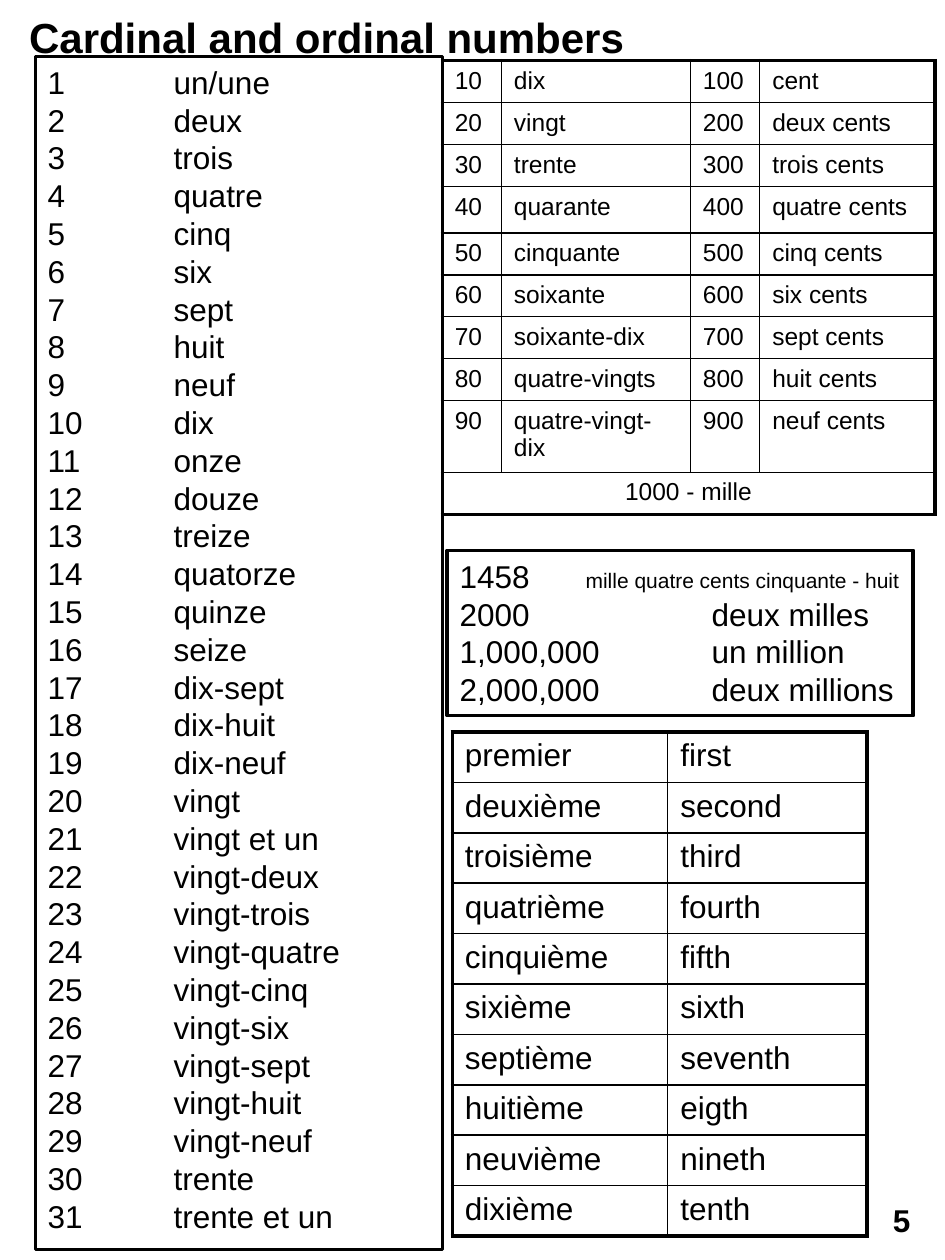
"""Build a one-page reference sheet of French cardinal and ordinal numbers."""
from lxml import etree
from pptx import Presentation
from pptx.dml.color import RGBColor
from pptx.enum.shapes import MSO_SHAPE
from pptx.enum.text import MSO_ANCHOR, MSO_AUTO_SIZE, PP_ALIGN
from pptx.oxml.ns import qn
from pptx.util import Pt

RECTANGLE = MSO_SHAPE.RECTANGLE
ROUNDED = MSO_SHAPE.ROUNDED_RECTANGLE
TOP, MIDDLE = MSO_ANCHOR.TOP, MSO_ANCHOR.MIDDLE
LEFT, CENTER = PP_ALIGN.LEFT, PP_ALIGN.CENTER
NO_AUTOFIT = MSO_AUTO_SIZE.NONE

TITLE_ONLY = 5
BLACK = "000000"
THIN, THICK = 1, 2.25
TAB = 72
LINE_HEIGHT = 21.6

CARDINALS = [
    "un/une", "deux", "trois", "quatre", "cinq", "six", "sept", "huit", "neuf", "dix",
    "onze", "douze", "treize", "quatorze", "quinze", "seize", "dix-sept", "dix-huit",
    "dix-neuf", "vingt", "vingt et un", "vingt-deux", "vingt-trois", "vingt-quatre",
    "vingt-cinq", "vingt-six", "vingt-sept", "vingt-huit", "vingt-neuf", "trente",
    "trente et un",
]
TENS = ["dix", "vingt", "trente", "quarante", "cinquante", "soixante", "soixante-dix",
        "quatre-vingts", "quatre-vingt-dix"]
HUNDREDS = ["cent", "deux cents", "trois cents", "quatre cents", "cinq cents",
            "six cents", "sept cents", "huit cents", "neuf cents"]
ORDINALS = [
    ("premier", "first"), ("deuxième", "second"), ("troisième", "third"),
    ("quatrième", "fourth"), ("cinquième", "fifth"), ("sixième", "sixth"),
    ("septième", "seventh"), ("huitième", "eigth"), ("neuvième", "nineth"),
    ("dixième", "tenth"),
]
LARGE_NUMBERS = [
    [("1458\t", 18), ("mille quatre cents cinquante - huit", 12)],
    [("2000\t\tdeux milles", 18)],
    [("1,000,000 \tun million", 18)],
    [("2,000,000\tdeux millions", 18)],
]


def color(value):
    """Return the colour for a hex string."""
    return RGBColor.from_string(value)


def apply_format(target, values):
    """Set each named attribute on the target."""
    for name, value in values.items():
        setattr(target, name, value)


def add_run(paragraph, text, size, bold=False):
    """Append a run of black Arial text."""
    run = paragraph.add_run()
    run.text = text
    apply_format(run.font, {"name": "Arial", "size": Pt(size), "bold": bold})
    run.font.color.rgb = color(BLACK)


def format_frame(frame, anchor):
    """Give a text frame fixed size, wrapping and standard margins."""
    apply_format(frame, {
        "word_wrap": True, "auto_size": NO_AUTOFIT, "vertical_anchor": anchor,
        "margin_left": Pt(7.2), "margin_right": Pt(7.2),
        "margin_top": Pt(3.6), "margin_bottom": Pt(3.6),
    })


def place_title(slide, text, left, top, width, height):
    """Move and format the title placeholder."""
    title = slide.shapes.title
    apply_format(title, {"left": Pt(left), "top": Pt(top),
                         "width": Pt(width), "height": Pt(height)})
    format_frame(title.text_frame, TOP)
    paragraph = title.text_frame.paragraphs[0]
    paragraph.alignment = LEFT
    add_run(paragraph, text, 24, True)


def add_box(slide, kind, bounds, line_width=None, anchor=TOP):
    """Add an unfilled box and return its text frame."""
    shape = slide.shapes.add_shape(kind, *map(Pt, bounds))
    shape.shadow.inherit = False
    shape.fill.background()
    if line_width:
        shape.line.width = Pt(line_width)
        shape.line.color.rgb = color(BLACK)
    else:
        shape.line.fill.background()
    format_frame(shape.text_frame, anchor)
    return shape.text_frame


def add_tabbed_lines(frame, lines):
    """Fill a frame with lines whose columns are set by tab stops."""
    for index, runs in enumerate(lines):
        paragraph = frame.add_paragraph() if index else frame.paragraphs[0]
        apply_format(paragraph, {"alignment": LEFT, "line_spacing": Pt(LINE_HEIGHT)})
        stops = etree.SubElement(paragraph._p.get_or_add_pPr(), qn("a:tabLst"))
        for count in (1, 2):
            etree.SubElement(stops, qn("a:tab"), pos=str(Pt(TAB * count)), algn="l")
        for text, size in runs:
            add_run(paragraph, text, size)


def set_borders(cell, widths):
    """Draw the cell borders with the given width for each side."""
    properties = cell._tc.get_or_add_tcPr()
    for side, width in widths.items():
        line = etree.SubElement(properties, qn(f"a:ln{side}"), w=str(Pt(width)))
        fill = etree.SubElement(line, qn("a:solidFill"))
        etree.SubElement(fill, qn("a:srgbClr"), val=BLACK)


def add_grid(slide, left, top, widths, heights, rows, size):
    """Add a table with a thick frame, merging rows that hold one text."""
    shape = slide.shapes.add_table(len(heights), len(widths), Pt(left), Pt(top),
                                   Pt(sum(widths)), Pt(sum(heights)))
    table = shape.table
    apply_format(table, {"first_row": False, "horz_banding": False})
    for column, width in zip(table.columns, widths):
        column.width = Pt(width)
    last_row, last_column = len(heights) - 1, len(widths) - 1
    for row_index, texts in enumerate(rows):
        table.rows[row_index].height = Pt(heights[row_index])
        merged = len(texts) == 1
        if merged:
            table.cell(row_index, 0).merge(table.cell(row_index, last_column))
        for column_index in range(len(widths)):
            cell = table.cell(row_index, column_index)
            at_right = merged or column_index == last_column
            set_borders(cell, {
                "L": THICK if column_index == 0 else THIN,
                "R": THICK if at_right else THIN,
                "T": THICK if row_index == 0 else THIN,
                "B": THICK if row_index == last_row else THIN,
            })
            cell.fill.background()
            if column_index < len(texts):
                paragraph = cell.text_frame.paragraphs[0]
                paragraph.alignment = CENTER if merged else LEFT
                add_run(paragraph, texts[column_index], size)


def main():
    """Build and save the sheet."""
    presentation = Presentation()
    apply_format(presentation, {"slide_width": Pt(540), "slide_height": Pt(720)})
    slide = presentation.slides.add_slide(presentation.slide_layouts[TITLE_ONLY])

    place_title(slide, "Cardinal and ordinal numbers", 9.4, 2.9, 481.7, 36)

    cardinal_frame = add_box(slide, RECTANGLE, (20.2, 32.4, 232.6, 681.8), 1.5)
    add_tabbed_lines(cardinal_frame, [[(f"{number}\t{word}", 18)]
                                      for number, word in enumerate(CARDINALS, 1)])

    add_grid(slide, 258.5, 418.3, [123.1, 113.8], [28.8] * len(ORDINALS), ORDINALS, 18)

    large_frame = add_box(slide, RECTANGLE, (255.6, 314.6, 266.4, 94.3), THICK)
    add_tabbed_lines(large_frame, LARGE_NUMBERS)

    page_frame = add_box(slide, ROUNDED, (495.4, 680.4, 39.6, 33.8), anchor=MIDDLE)
    page_frame.paragraphs[0].alignment = CENTER
    add_run(page_frame.paragraphs[0], "5", 18, True)

    round_numbers = [(str(count * 10), ten, str(count * 100), hundred)
                     for count, (ten, hundred) in enumerate(zip(TENS, HUNDREDS), 1)]
    heights = [24] * 3 + [26.5] + [24] * 4 + [41, 24]
    add_grid(slide, 252.7, 34.6, [33.8, 108, 39.6, 100.1], heights,
             round_numbers + [("1000 - mille",)], 14)

    presentation.save("out.pptx")


if __name__ == "__main__":
    main()
